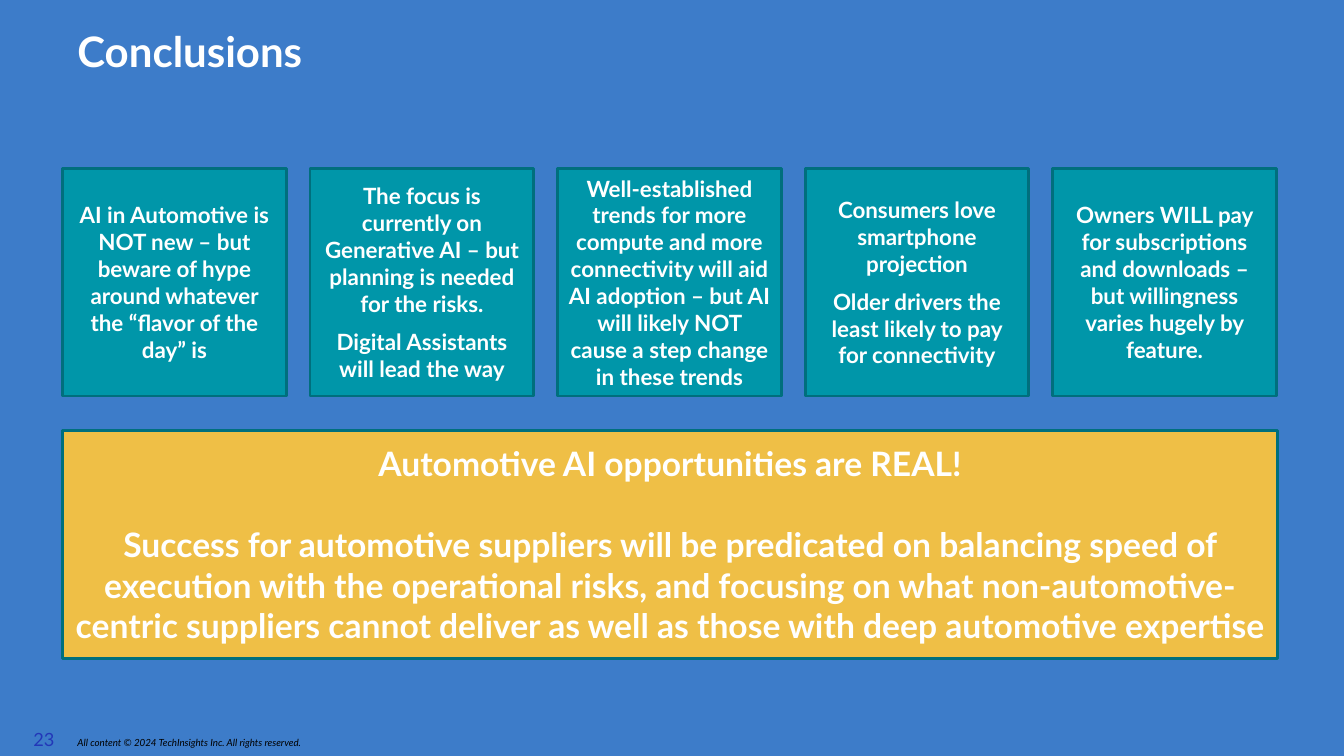
import pptx
import pptx.util
import pptx.dml.color
import pptx.enum.shapes
import pptx.enum.text
from dataclasses import dataclass

Inches = pptx.util.Inches
Pt = pptx.util.Pt
ALIGN = pptx.enum.text.PP_ALIGN
ANCHOR = pptx.enum.text.MSO_ANCHOR


@dataclass(frozen=True)
class Theme:
    font: str = "Lato"
    background: str = "3D7CC9"
    card: str = "0096A9"
    banner: str = "EFBF46"
    border: str = "006F7D"
    light: str = "FFFFFF"
    dark: str = "000000"
    number: str = "2237B8"
    title_size: int = 30
    banner_size: int = 24
    card_size: int = 16
    number_size: int = 13
    footer_size: int = 7


THEME = Theme()
LEFT, CARD_TOP, BANNER_TOP = 0.62, 1.67, 4.27
CARD_WIDTH, BOX_HEIGHT, CARD_PITCH = 2.22, 2.26, 2.455
BANNER_WIDTH = 12.05

TAKEAWAYS = [
    ["AI in Automotive is NOT new – but beware of hype around whatever the “flavor of the day” is"],
    ["The focus is currently on Generative AI – but planning is needed for the risks.",
     "Digital Assistants will lead the way"],
    ["Well-established trends for more compute and more connectivity will aid AI adoption "
     "– but AI will likely NOT cause a step change in these trends"],
    ["Consumers love smartphone projection",
     "Older drivers the least likely to pay for connectivity"],
    ["Owners WILL pay for subscriptions and downloads – but willingness varies hugely by feature."],
]
MESSAGE = [
    "Automotive AI opportunities are REAL!",
    "Success for automotive suppliers will be predicated on balancing speed of execution with the "
    "operational risks, and focusing on what non-automotive-centric suppliers cannot deliver as well "
    "as those with deep automotive expertise",
]


def rgb(value):
    return pptx.dml.color.RGBColor.from_string(value)


def write(tf, paragraphs, size, color=THEME.light, bold=False, italic=False,
          align=ALIGN.LEFT, gap=0):
    for i, text in enumerate(paragraphs):
        p = tf.add_paragraph() if i else tf.paragraphs[0]
        p.alignment = align
        p.space_before = Pt(gap if i else 0)
        r = p.add_run()
        r.text = text
        r.font.name = THEME.font
        r.font.size = Pt(size)
        r.font.bold = bold
        r.font.italic = italic
        r.font.color.rgb = rgb(color)


def add_label(s, text, left, top, width, height, size, inset=True, wrap=True, **style):
    tb = s.shapes.add_textbox(Inches(left), Inches(top), Inches(width), Inches(height))
    tf = tb.text_frame
    tf.word_wrap = wrap
    if not inset:
        tf.margin_left = tf.margin_right = tf.margin_top = tf.margin_bottom = 0
    write(tf, [text], size, **style)


def add_panel(s, paragraphs, left, top, width, fill, size, gap):
    sp = s.shapes.add_shape(pptx.enum.shapes.MSO_SHAPE.RECTANGLE, Inches(left), Inches(top),
                            Inches(width), Inches(BOX_HEIGHT))
    sp.shadow.inherit = False
    sp.fill.solid()
    sp.fill.fore_color.rgb = rgb(fill)
    sp.line.color.rgb = rgb(THEME.border)
    sp.line.width = Pt(2)
    tf = sp.text_frame
    tf.word_wrap = True
    tf.vertical_anchor = ANCHOR.MIDDLE
    write(tf, paragraphs, size, bold=True, align=ALIGN.CENTER, gap=gap)


def main():
    prs = pptx.Presentation()
    prs.slide_width, prs.slide_height = Inches(13.33), Inches(7.5)
    s = prs.slides.add_slide(prs.slide_layouts[6])
    s.background.fill.solid()
    s.background.fill.fore_color.rgb = rgb(THEME.background)

    add_label(s, "All content © 2024 TechInsights Inc. All rights reserved.",
              0.67, 7.26, 6.28, 0.22, THEME.footer_size, color=THEME.dark, italic=True)
    add_label(s, "23", 0.33, 7.23, 0.22, 0.22, THEME.number_size,
              inset=False, wrap=False, color=THEME.number)
    add_label(s, "Conclusions", 0.67, 0.2, 12, 0.8, THEME.title_size, bold=True)

    for i, takeaway in enumerate(TAKEAWAYS):
        add_panel(s, takeaway, LEFT + i * CARD_PITCH, CARD_TOP, CARD_WIDTH,
                  THEME.card, THEME.card_size, gap=8)
    add_panel(s, MESSAGE, LEFT, BANNER_TOP, BANNER_WIDTH,
              THEME.banner, THEME.banner_size, gap=29)

    prs.save("out.pptx")


if __name__ == "__main__":
    main()
